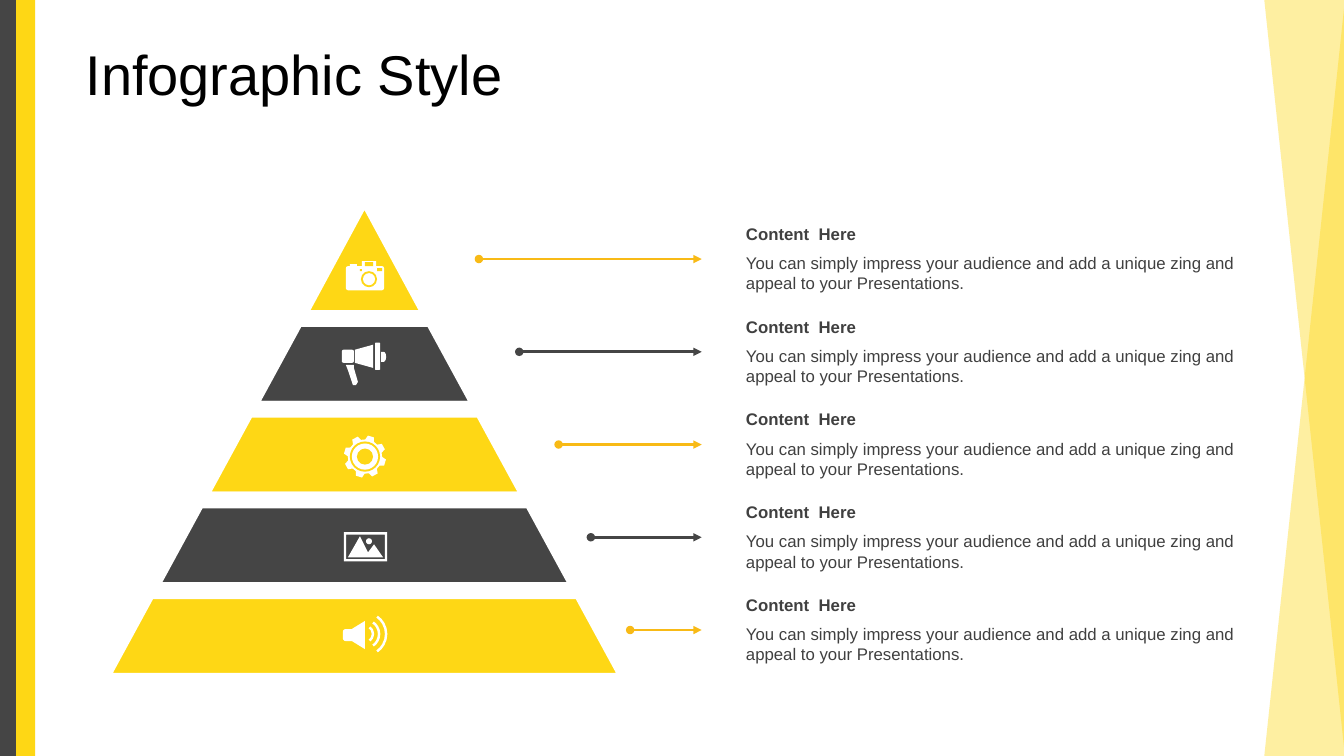
from math import cos, radians, sin

from lxml.etree import SubElement as SubEl
from pptx import Presentation
from pptx.dml.color import RGBColor
from pptx.enum.shapes import MSO_CONNECTOR as Link, MSO_SHAPE as Shape
from pptx.enum.text import MSO_ANCHOR as Anchor
from pptx.oxml.ns import qn
from pptx.util import Inches, Pt

GOLD = RGBColor(0xFE, 0xD7, 0x15)
AMBER = RGBColor(0xF8, 0xBA, 0x16)
DARK = RGBColor(0x45, 0x45, 0x45)
INK = RGBColor(0x40, 0x40, 0x40)
WHITE = RGBColor(0xFF, 0xFF, 0xFF)
BLACK = RGBColor(0, 0, 0)

FONT = "Arial"
HEAD = "Content  Here"
BODY = ("You can simply impress your audience and add a unique zing and "
        "appeal to your Presentations.")
STARTS = [4.75, 5.15, 5.54, 5.86, 6.25]
STEP = 0.92


def paint(shape, color):
    shape.shadow.inherit = False
    shape.fill.solid()
    shape.fill.fore_color.rgb = color
    shape.line.fill.background()
    return shape


def add_form(shapes, kind, box, color, *adjust):
    shape = shapes.add_shape(kind, *map(Inches, box))
    for i, value in enumerate(adjust):
        shape.adjustments[i] = value
    return paint(shape, color)


def add_poly(shapes, points, color=WHITE):
    points = [(Inches(x), Inches(y)) for x, y in points]
    pen = shapes.build_freeform(*points[0])
    pen.add_line_segments(points[1:], close=True)
    return paint(pen.convert_to_shape(), color)


def add_disc(shapes, x, y, radius, color):
    add_form(shapes, Shape.OVAL,
             (x - radius, y - radius, 2 * radius, 2 * radius), color)


def add_text(shapes, box, text, size, color, bold=False, anchor=Anchor.TOP):
    frame = shapes.add_textbox(*map(Inches, box)).text_frame
    frame.word_wrap = True
    frame.vertical_anchor = anchor
    para = frame.paragraphs[0]
    run = para.add_run()
    run.text = text
    font = run.font
    font.name, font.size, font.bold = FONT, Pt(size), bold
    font.color.rgb = color
    return para


def add_arrow(shapes, start, end, y, color):
    line = shapes.add_connector(Link.STRAIGHT, Inches(start), Inches(y),
                                Inches(end), Inches(y))
    line.line.color.rgb = color
    line.line.width = Pt(2)
    stroke = line.line._get_or_add_ln()
    SubEl(stroke, qn("a:headEnd"), type="oval")
    SubEl(stroke, qn("a:tailEnd"), type="triangle")
    SubEl(line._element.spPr, qn("a:effectLst"))


def add_wedge(shapes, flips):
    """Add a clear gold triangle on the right edge, flipped as named."""
    wedge = add_form(shapes, Shape.RIGHT_TRIANGLE, (12.54, 0, 0.8, 7.5), GOLD)
    for flip in flips:
        wedge._element.spPr.xfrm.set(flip, "1")
    tint = wedge._element.spPr.find(qn("a:solidFill"))[0]
    SubEl(tint, qn("a:alpha"), val="40000")


def add_layer(shapes, i, color):
    top, height = (2.26 + 0.9 * i, 0.9) if i else (1.91, 1.25)
    box = (2.94 - 0.49 * i, top, 1.35 + 0.98 * i, height)
    layer = add_form(shapes, Shape.TRAPEZOID, box, color, 0.544)
    layer.line.color.rgb = WHITE
    layer.line.width = Pt(12)


def draw_camera(shapes):
    add_form(shapes, Shape.ROUNDED_RECTANGLE, (3.43, 2.64, 0.38, 0.24), WHITE, 0.1)
    for box, color in [((3.47, 2.62, 0.07, 0.03), WHITE),
                       ((3.59, 2.59, 0.14, 0.06), WHITE),
                       ((3.62, 2.6, 0.08, 0.04), GOLD),
                       ((3.57, 2.67, 0.02, 0.02), GOLD),
                       ((3.74, 2.66, 0.05, 0.03), GOLD)]:
        add_form(shapes, Shape.RECTANGLE, box, color)
    add_disc(shapes, 3.66, 2.77, 0.08, GOLD)
    add_disc(shapes, 3.66, 2.77, 0.06, WHITE)


def draw_horn(shapes):
    add_poly(shapes, [(3.43, 3.62), (3.51, 3.62), (3.51, 3.65), (3.55, 3.79),
                      (3.53, 3.82), (3.5, 3.82), (3.45, 3.67)])
    add_poly(shapes, [(3.52, 3.47), (3.7, 3.42), (3.7, 3.65), (3.52, 3.6)])
    add_form(shapes, Shape.ROUNDED_RECTANGLE, (3.39, 3.47, 0.12, 0.13), WHITE, 0.15)
    add_form(shapes, Shape.ROUNDED_RECTANGLE, (3.72, 3.4, 0.05, 0.27), WHITE, 0.15)
    add_form(shapes, Shape.FLOWCHART_DELAY, (3.78, 3.49, 0.05, 0.1), WHITE)


def draw_gear(shapes):
    x, y = 3.62, 4.53
    teeth = [(angle + turn, radius) for angle in range(0, 360, 45)
             for turn, radius in [(1, 0.17), (8, 0.21), (25, 0.21), (32, 0.17)]]
    add_poly(shapes, [(x + r * cos(radians(a)), y + r * sin(radians(a)))
                      for a, r in teeth])
    for radius, color in [(0.15, GOLD), (0.13, WHITE), (0.08, GOLD)]:
        add_disc(shapes, x, y, radius, color)


def draw_photo(shapes):
    add_form(shapes, Shape.FRAME, (3.41, 5.28, 0.43, 0.29), WHITE, 0.08)
    add_poly(shapes, [(3.45, 5.53), (3.57, 5.32), (3.65, 5.48), (3.71, 5.4),
                      (3.8, 5.53)])
    add_disc(shapes, 3.66, 5.37, 0.03, WHITE)


def draw_sound(shapes):
    add_form(shapes, Shape.ROUNDED_RECTANGLE, (3.4, 6.24, 0.12, 0.12), WHITE, 0.25)
    add_poly(shapes, [(3.49, 6.24), (3.62, 6.16), (3.62, 6.44), (3.49, 6.36)])
    for radius in (0.08, 0.14, 0.21):
        arc = shapes.add_shape(Shape.ARC, Inches(3.62 - radius), Inches(6.29 - radius),
                               Inches(2 * radius), Inches(2 * radius))
        arc.shadow.inherit = False
        arc.fill.background()
        arc.line.color.rgb = WHITE
        arc.line.width = Pt(1.75)
        for i, angle in enumerate((305, 55)):
            arc.adjustments[i] = angle * 0.6  # 60000ths of a degree per 100000


def main():
    deck = Presentation()
    deck.slide_width, deck.slide_height = Inches(13.33), Inches(7.5)
    shapes = deck.slides.add_slide(deck.slide_layouts[6]).shapes

    add_wedge(shapes, ["flipH", "flipV"])
    for left, color in [(0, DARK), (0.16, GOLD)]:
        add_form(shapes, Shape.RECTANGLE, (left, 0, 0.19, 7.5), color)
    add_wedge(shapes, ["flipH"])

    title = add_text(shapes, (0.75, 0.37, 12.26, 0.79), "Infographic Style", 40,
                     BLACK, anchor=Anchor.MIDDLE)
    title.line_spacing = 0.9

    icons = [draw_camera, draw_horn, draw_gear, draw_photo, draw_sound]
    for i, (start, draw) in enumerate(zip(STARTS, icons)):
        shift = STEP * i
        add_layer(shapes, i, DARK if i % 2 else GOLD)
        add_arrow(shapes, start, 6.96, 2.57 + shift, DARK if i % 2 else AMBER)
        add_text(shapes, (7.3, 2.17 + shift, 5.11, 0.3), HEAD, 12, INK,
                 bold=True, anchor=Anchor.MIDDLE)
        add_text(shapes, (7.3, 2.46 + shift, 5.11, 0.5), BODY, 12, INK)
        draw(shapes.add_group_shape().shapes)

    deck.save("out.pptx")


if __name__ == "__main__":
    main()
